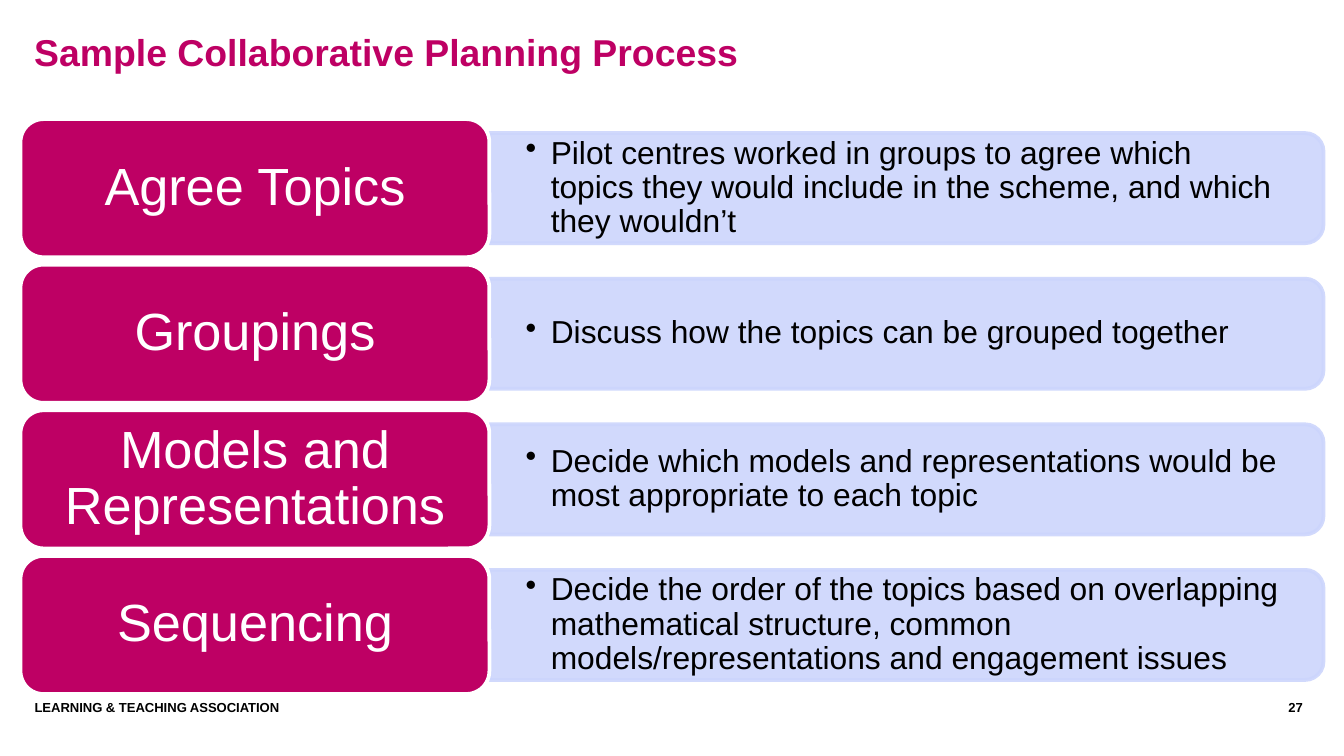
from lxml import etree
from pptx import Presentation
from pptx.dml.color import RGBColor
from pptx.enum.shapes import MSO_SHAPE as Shape
from pptx.enum.text import MSO_ANCHOR as Anchor, MSO_AUTO_SIZE as AutoSize, PP_ALIGN as Align
from pptx.oxml.ns import qn
from pptx.util import Pt

MAGENTA, LAVENDER, WHITE, BLACK = "BE0064", "CCD5FC", "FFFFFF", "000000"
STEPS = [
    ("Agree Topics",
     "Pilot centres worked in groups to agree which topics they would include "
     "in the scheme, and which they wouldn’t"),
    ("Groupings", "Discuss how the topics can be grouped together"),
    ("Models and Representations",
     "Decide which models and representations would be most appropriate to each topic"),
    ("Sequencing",
     "Decide the order of the topics based on overlapping mathematical structure, "
     "common models/representations and engagement issues"),
]


def paint(color_format, color):
    color_format.rgb = RGBColor.from_string(color)


def place(shape, left, top, width, height):
    shape.left, shape.top = Pt(left), Pt(top)
    shape.width, shape.height = Pt(width), Pt(height)


def write(shape, text, size, color, bold=False, align=Align.LEFT,
          anchor=Anchor.TOP, inset=(0, 0), spacing=None):
    frame = shape.text_frame
    frame.word_wrap = True
    frame.auto_size = AutoSize.NONE
    frame.vertical_anchor = anchor
    frame.margin_left = frame.margin_right = Pt(inset[0])
    frame.margin_top = frame.margin_bottom = Pt(inset[1])
    paragraph = frame.paragraphs[0]
    paragraph.text = text
    paragraph.alignment = align
    paragraph.line_spacing = spacing
    font = paragraph.font
    font.name, font.size, font.bold = "Arial", Pt(size), bold
    paint(font.color, color)
    return paragraph


def add_box(slide, kind, box, fill, line):
    shape = slide.shapes.add_shape(kind, *map(Pt, box))
    shape.shadow.inherit = False
    shape.fill.solid()
    paint(shape.fill.fore_color, fill)
    paint(shape.line.color, line)
    shape.line.width = Pt(2)
    return shape


def add_text(slide, box, *content, **style):
    return write(slide.shapes.add_textbox(*map(Pt, box)), *content, **style)


def add_bullet(paragraph, indent):
    properties = paragraph._p.get_or_add_pPr()
    properties.set("marL", str(Pt(indent)))
    properties.set("indent", str(-Pt(indent)))
    etree.SubElement(properties, qn("a:buChar")).set("char", "•")
    properties.append(properties.find(qn("a:defRPr")))


def add_step(slide, left, top, width, height, label, detail):
    label_width, bar_height = 251.2, 59
    bar_left = left + label_width
    bar_width = width - label_width
    bar_top = top + (height - bar_height) / 2

    turned_box = (bar_left + (bar_width - bar_height) / 2,
                  bar_top - (bar_width - bar_height) / 2, bar_height, bar_width)
    bar = add_box(slide, Shape.ROUND_2_SAME_RECTANGLE, turned_box, LAVENDER, LAVENDER)
    bar.rotation = 90
    for color in bar._element.spPr.iter(qn("a:srgbClr")):
        etree.SubElement(color, qn("a:alpha")).set("val", "90000")

    paragraph = add_text(slide, (bar_left, bar_top + 3, bar_width - 3, bar_height - 6),
                         detail, 17, BLACK, anchor=Anchor.MIDDLE,
                         inset=(19.4, 10), spacing=0.9)
    add_bullet(paragraph, 13.5)

    heading = add_box(slide, Shape.ROUNDED_RECTANGLE,
                      (left, top, label_width, height), MAGENTA, WHITE)
    write(heading, label, 28, WHITE, align=Align.CENTER, anchor=Anchor.MIDDLE,
          inset=(8.5, 4), spacing=0.9)


def add_steps(slide, left, top, width, height):
    gap = 4
    row_height = (height - gap * (len(STEPS) - 1)) / len(STEPS)
    for index, (label, detail) in enumerate(STEPS):
        add_step(slide, left, top + index * (row_height + gap), width, row_height,
                 label, detail)


def add_title(slide, left, top, width, height):
    title = slide.shapes.title
    place(title, left, top, width, height)
    write(title, "Sample Collaborative Planning Process", 20, MAGENTA,
          bold=True, spacing=Pt(20))


def add_footer(slide, left, top, width, height):
    number_width = 71
    add_text(slide, (left, top, width - number_width, height),
             "LEARNING & TEACHING ASSOCIATION", 7, BLACK, bold=True)
    add_text(slide, (left + width - number_width, top, number_width, height),
             "27", 7, BLACK, bold=True, align=Align.RIGHT)


def main():
    presentation = Presentation()
    presentation.slide_width, presentation.slide_height = Pt(720), Pt(405)
    slide = presentation.slides.add_slide(presentation.slide_layouts[5])
    add_title(slide, 18.3, 19.5, 664.5, 54.5)
    add_steps(slide, 11, 63.8, 698, 308)
    add_footer(slide, 18.5, 375, 679.5, 21.5)
    presentation.save("out.pptx")


if __name__ == "__main__":
    main()
